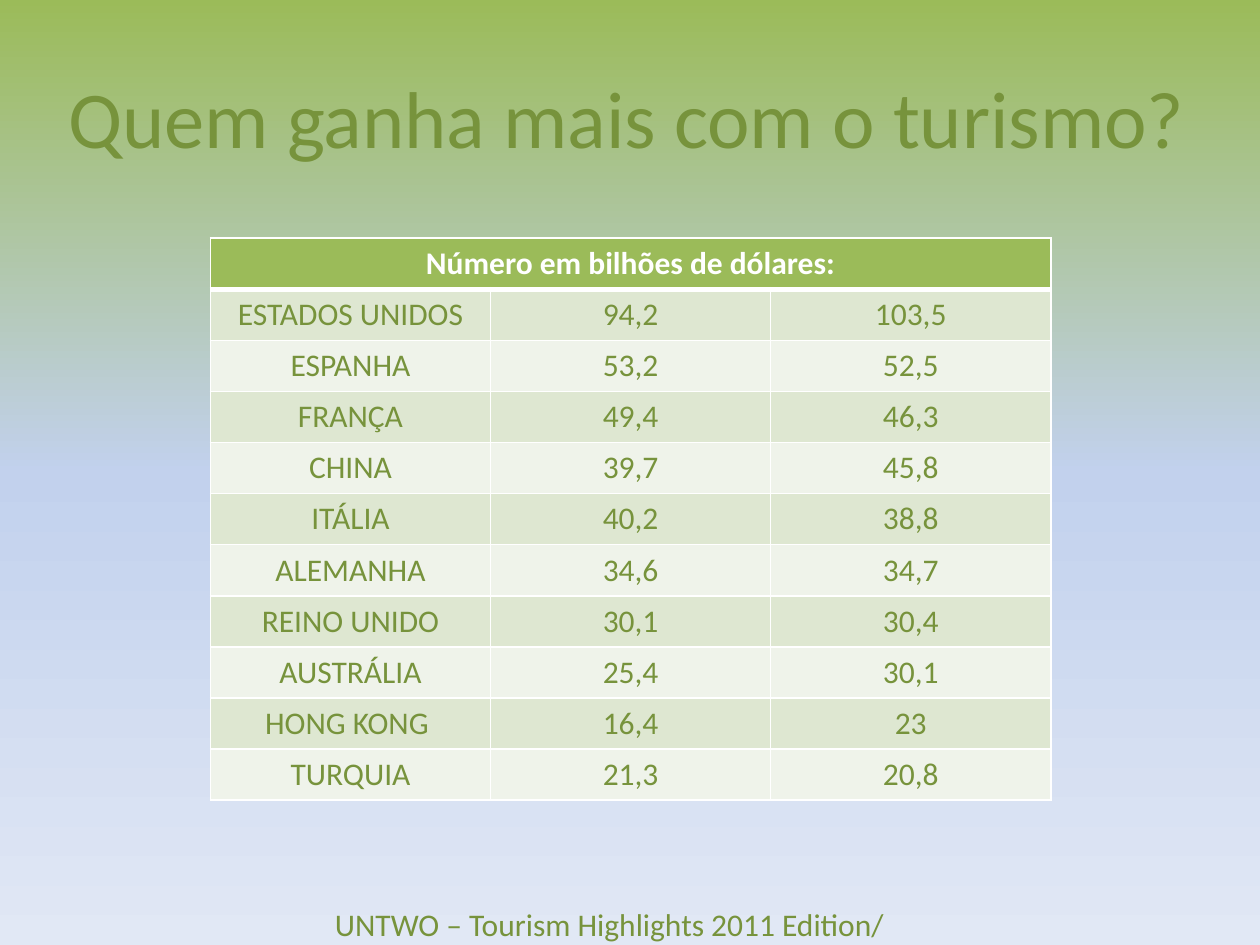
from copy import deepcopy

from lxml import etree
from pptx import Presentation
from pptx.dml.color import RGBColor as RGB
from pptx.enum.text import MSO_ANCHOR as Anchor, MSO_AUTO_SIZE as AutoSize, PP_ALIGN as Align
from pptx.oxml.ns import qn
from pptx.util import Inches, Pt

COLORS = {
    "green": "9BBB59",
    "dark_green": "77933C",
    "sky": "C2D1ED",
    "pale_sky": "E1E8F5",
    "band_dark": "DEE7D1",
    "band_light": "EFF3EA",
    "white": "FFFFFF",
}

HEADING = "Número em bilhões de dólares:"
REVENUES = [
    ("ESTADOS UNIDOS", "94,2", "103,5"),
    ("ESPANHA", "53,2", "52,5"),
    ("FRANÇA", "49,4", "46,3"),
    ("CHINA", "39,7", "45,8"),
    ("ITÁLIA", "40,2", "38,8"),
    ("ALEMANHA", "34,6", "34,7"),
    ("REINO UNIDO", "30,1", "30,4"),
    ("AUSTRÁLIA", "25,4", "30,1"),
    ("HONG KONG ", "16,4", "23"),
    ("TURQUIA", "21,3", "20,8"),
]


class SlideBuilder:
    font_name = "Calibri"

    def __init__(self, slide):
        self.slide = slide

    def color(self, name):
        return RGB.from_string(COLORS[name])

    def background(self, names):
        """Vertical gradient with evenly spaced stops, top to bottom."""
        fill = self.slide.background.fill
        fill.gradient()
        fill.gradient_angle = 270
        stop_list = self.slide.element.find(".//" + qn("a:gsLst"))
        while len(stop_list) < len(names):
            stop_list.append(deepcopy(stop_list[0]))
        for i, (stop, name) in enumerate(zip(fill.gradient_stops, names)):
            stop.position = i / (len(names) - 1)
            stop.color.rgb = self.color(name)

    def put_line(self, frame, text, size, color="dark_green", align=Align.CENTER, bold=False):
        line = frame.paragraphs[0]
        line.text = text
        line.alignment = align
        line.font.name = self.font_name
        line.font.size = Pt(size)
        line.font.bold = bold
        line.font.color.rgb = self.color(color)

    def text(self, left, top, width, height, text, size, align=Align.LEFT,
             anchor=Anchor.TOP, auto_size=AutoSize.NONE):
        box = self.slide.shapes.add_textbox(
            Inches(left), Inches(top), Inches(width), Inches(height))
        frame = box.text_frame
        frame.word_wrap = True
        frame.auto_size = auto_size
        frame.vertical_anchor = anchor
        self.put_line(frame, text, size, align=align)

    def borders(self, cell, widths):
        properties = cell._tc.get_or_add_tcPr()
        for side, width in widths.items():
            line = etree.SubElement(properties, qn(f"a:ln{side}"), w=str(Pt(width)))
            fill = etree.SubElement(line, qn("a:solidFill"))
            etree.SubElement(fill, qn("a:srgbClr"), val=COLORS["white"])

    def table(self, left, top, width, height, heading, rows, size):
        columns = len(rows[0])
        grid = self.slide.shapes.add_table(
            len(rows) + 1, columns,
            Inches(left), Inches(top), Inches(width), Inches(height)).table
        grid.cell(0, 0).merge(grid.cell(0, columns - 1))

        # Heading row first, then alternating bands
        for r, texts in enumerate([(heading,) + ("",) * (columns - 1)] + rows):
            is_heading = r == 0
            band = "green" if is_heading else "band_dark" if r % 2 else "band_light"
            for c, text in enumerate(texts):
                cell = grid.cell(r, c)
                self.borders(cell, {"L": 1, "R": 1, "T": 3 if r == 1 else 1,
                                    "B": 3 if is_heading else 1})
                cell.fill.solid()
                cell.fill.fore_color.rgb = self.color(band)
                if text:
                    self.put_line(cell.text_frame, text, size, bold=is_heading,
                                  color="white" if is_heading else "dark_green")


def main():
    deck = Presentation()
    deck.slide_width, deck.slide_height = Inches(10), Inches(7.5)
    builder = SlideBuilder(deck.slides.add_slide(deck.slide_layouts[6]))

    builder.background(["green", "sky", "pale_sky"])

    # Title
    builder.text(0.22, 0.3, 9.5, 1.25, "Quem ganha mais com o turismo?", 46,
                 align=Align.CENTER, anchor=Anchor.MIDDLE)

    # Tourism revenue by country
    builder.table(1.67, 1.89, 6.67, 4.46, HEADING, REVENUES, 18)

    # Source line
    builder.text(2.56, 7.13, 6.22, 0.4, "UNTWO – Tourism Highlights 2011 Edition/", 18,
                 auto_size=AutoSize.SHAPE_TO_FIT_TEXT)

    deck.save("out.pptx")


if __name__ == "__main__":
    main()
